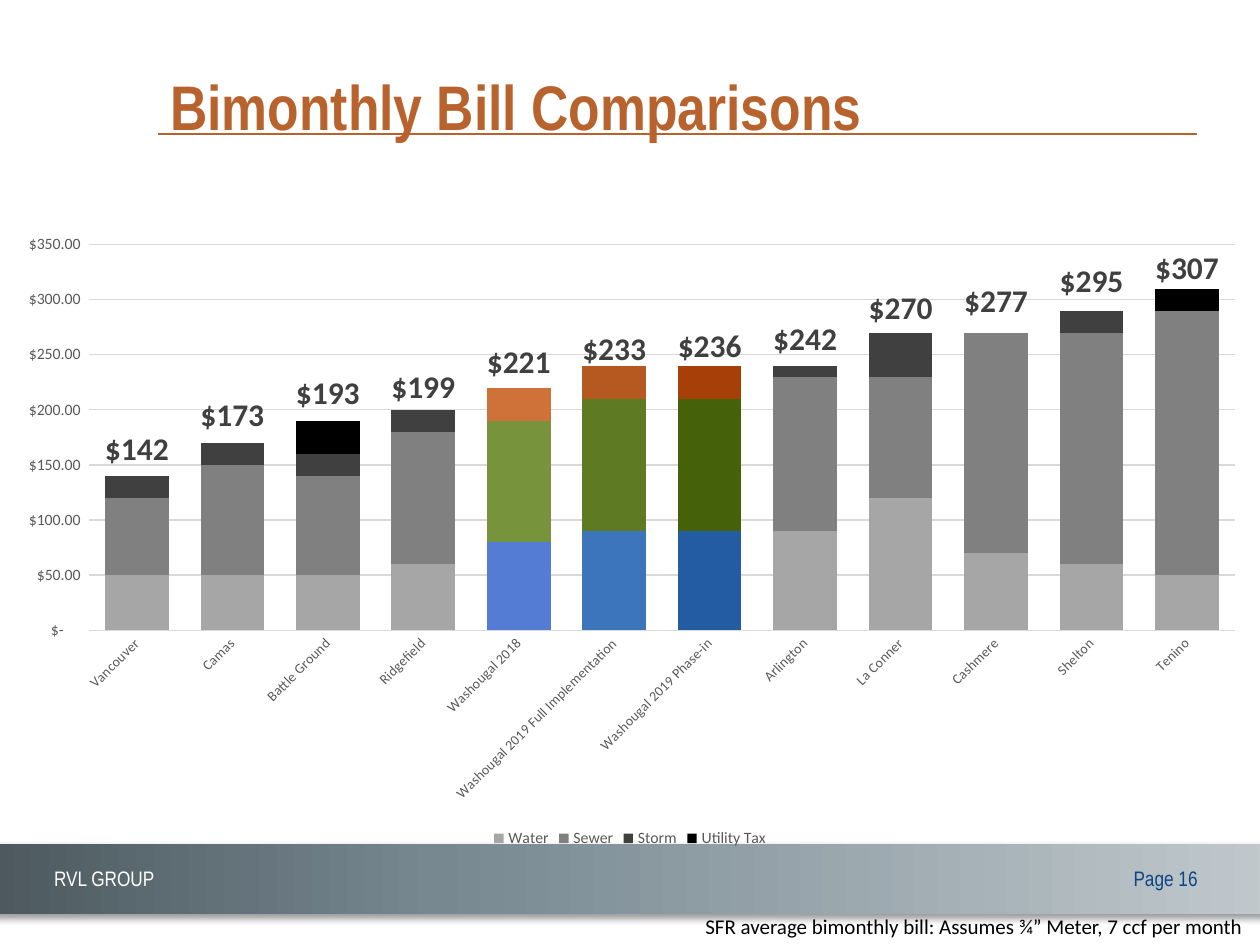
import pptx
import pptx.chart.data
import pptx.dml.color
import pptx.enum.chart
import pptx.enum.shapes
import pptx.enum.text
import pptx.oxml
import pptx.oxml.ns
import pptx.util
from dataclasses import dataclass
from lxml import etree

Cm = pptx.util.Cm
Pt = pptx.util.Pt
qn = pptx.oxml.ns.qn
ALIGN = pptx.enum.text.PP_ALIGN
ANCHOR = pptx.enum.text.MSO_ANCHOR


@dataclass(frozen=True)
class Theme:
    heading_font: str = "Arial Narrow"
    body_font: str = "Calibri"
    accent: str = "B8632E"
    page: str = "0B4585"
    white: str = "FFFFFF"
    black: str = "000000"
    axis: str = "595959"
    grid: str = "D9D9D9"
    label: str = "404040"
    band: tuple = ((0, "C1C9CD"), (65, "778891"), (100, "4B575D"))
    title_size: int = 36
    label_size: int = 18
    text_size: int = 12
    chart_size: int = 10
    axis_size: int = 9
    category_size: int = 8


THEME = Theme()

CITIES = ["Vancouver", "Camas", "Battle Ground", "Ridgefield", "Washougal 2018",
          "Washougal 2019 Full Implementation", "Washougal 2019 Phase-in",
          "Arlington", "La Conner", "Cashmere", "Shelton", "Tenino"]
FIRST_HIGHLIGHT = CITIES.index("Washougal 2018")
SERVICES = [
    ("Water", [50, 50, 50, 60, 80, 90, 90, 90, 120, 70, 60, 50],
     "A6A6A6", ["557CD5", "3C75BC", "235CA3"]),
    ("Sewer", [70, 100, 90, 120, 110, 120, 120, 140, 110, 200, 210, 240],
     "808080", ["77933C", "5E7A23", "45610A"]),
    ("Storm", [20, 20, 20, 20, 30, 30, 30, 10, 40, 0, 20, 0],
     "404040", ["CE723A", "B55921", "A64008"]),
    ("Utility Tax", [0, 0, 30, 0, 0, 0, 0, 0, 0, 0, 0, 20], "000000", []),
]
TOTALS = [142, 173, 193, 199, 221, 233, 236, 242, 270, 277, 295, 307]
ACCOUNTING = '_("$"* #,##0.00_);_("$"* \\(#,##0.00\\);_("$"* "-"??_);_(@_)'


def rgb(color):
    return pptx.dml.color.RGBColor.from_string(color)


def format_font(font, size, color, name, bold=False):
    font.size = Pt(size)
    font.color.rgb = rgb(color)
    font.name = name
    font.bold = bold


def write_text(shape, text, size=THEME.text_size, color=THEME.black,
               font=THEME.body_font, bold=False, align=ALIGN.LEFT, anchor=ANCHOR.TOP):
    frame = shape.text_frame
    frame.word_wrap = True
    frame.vertical_anchor = anchor
    paragraph = frame.paragraphs[0]
    paragraph.alignment = align
    run = paragraph.add_run()
    run.text = text
    format_font(run.font, size, color, font, bold)


def add_text(slide, box, text, **style):
    write_text(slide.shapes.add_textbox(*map(Cm, box)), text, **style)


def add_title(slide, box, text):
    title = slide.shapes.title
    title.left, title.top, title.width, title.height = map(Cm, box)
    write_text(title, text, size=THEME.title_size, color=THEME.accent,
               font=THEME.heading_font, bold=True, anchor=ANCHOR.MIDDLE)


def add_band(slide, box):
    band = slide.shapes.add_shape(pptx.enum.shapes.MSO_SHAPE.RECTANGLE, *map(Cm, box))
    band.line.fill.background()
    band.shadow.inherit = False
    band.fill.background()
    namespace = pptx.oxml.ns.nsdecls("a")
    stops = "".join(f'<a:gs pos="{position * 1000}"><a:srgbClr val="{color}"/></a:gs>'
                    for position, color in THEME.band)
    gradient = pptx.oxml.parse_xml(
        f'<a:gradFill {namespace} rotWithShape="1"><a:gsLst>{stops}</a:gsLst>'
        '<a:lin ang="10800000" scaled="0"/></a:gradFill>')
    properties = band.element.spPr
    properties.replace(properties.find(qn("a:noFill")), gradient)
    properties.find(qn("a:effectLst")).append(pptx.oxml.parse_xml(
        f'<a:outerShdw {namespace} blurRad="{Pt(4)}" dist="{Pt(3)}" dir="2700000" '
        f'rotWithShape="0"><a:srgbClr val="{THEME.black}"><a:alpha val="40000"/>'
        '</a:srgbClr></a:outerShdw>'))


def add_rule(slide, left, right, top):
    rule = slide.shapes.add_connector(pptx.enum.shapes.MSO_CONNECTOR.STRAIGHT,
                                      Cm(left), Cm(top), Cm(right), Cm(top))
    rule.line.color.rgb = rgb(THEME.accent)
    rule.line.width = Pt(1.5)
    etree.SubElement(rule.element.spPr, qn("a:effectLst"))


def move_last_series_to_line(chart):
    bars = chart.element.find(f".//{qn('c:barChart')}")
    series = bars.findall(qn("c:ser"))[-1]
    for inverted in series.findall(qn("c:invertIfNegative")):
        series.remove(inverted)
    lines = pptx.oxml.parse_xml(
        f'<c:lineChart {pptx.oxml.ns.nsdecls("c")}><c:grouping val="standard"/>'
        '<c:varyColors val="0"/><c:marker val="1"/></c:lineChart>')
    lines.insert(2, series)
    for axis in bars.findall(qn("c:axId")):
        etree.SubElement(lines, qn("c:axId")).set("val", axis.get("val"))
    bars.addnext(lines)


def format_axes(chart):
    category, value = chart.category_axis, chart.value_axis
    for axis, size in ((category, THEME.category_size), (value, THEME.axis_size)):
        axis.major_tick_mark = pptx.enum.chart.XL_TICK_MARK.NONE
        axis.minor_tick_mark = pptx.enum.chart.XL_TICK_MARK.NONE
        format_font(axis.tick_labels.font, size, THEME.axis, THEME.body_font)
    for line in (category.format.line, value.major_gridlines.format.line):
        line.color.rgb = rgb(THEME.grid)
        line.width = Pt(0.75)
    body = chart.element.find(f".//{qn('c:catAx')}/{qn('c:txPr')}/{qn('a:bodyPr')}")
    body.set("rot", "-2700000")
    body.set("vert", "horz")
    value.minimum_scale, value.maximum_scale, value.major_unit = 0, 350, 50
    value.format.line.fill.background()
    value.tick_labels.number_format = ACCOUNTING
    value.tick_labels.number_format_is_linked = False


def format_legend(chart, hidden):
    chart.has_legend = True
    legend = chart.legend
    legend.position = pptx.enum.chart.XL_LEGEND_POSITION.BOTTOM
    legend.include_in_layout = False
    format_font(legend.font, THEME.axis_size, THEME.axis, THEME.body_font)
    chart.element.find(f".//{qn('c:legendPos')}").addnext(pptx.oxml.parse_xml(
        f'<c:legendEntry {pptx.oxml.ns.nsdecls("c")}><c:idx val="{hidden}"/>'
        '<c:delete val="1"/></c:legendEntry>'))


def format_totals(series):
    series.smooth = False
    series.format.line.fill.background()
    series.marker.style = pptx.enum.chart.XL_MARKER_STYLE.NONE
    labels = series.data_labels
    labels.show_value = True
    labels.position = pptx.enum.chart.XL_LABEL_POSITION.ABOVE
    labels.number_format = '"$"#,##0'
    labels.number_format_is_linked = False
    format_font(labels.font, THEME.label_size, THEME.label, THEME.body_font, bold=True)


def add_bill_chart(slide, box):
    data = pptx.chart.data.CategoryChartData()
    data.categories = CITIES
    for name, values, *_ in SERVICES:
        data.add_series(name, values)
    data.add_series("Series 5", TOTALS)
    chart = slide.shapes.add_chart(pptx.enum.chart.XL_CHART_TYPE.COLUMN_STACKED,
                                   *map(Cm, box), data).chart
    chart.has_title = False
    format_font(chart.font, THEME.chart_size, THEME.black, THEME.body_font)
    move_last_series_to_line(chart)
    bars, lines = chart.plots
    bars.gap_width, bars.overlap, bars.vary_by_categories = 50, 100, False
    for series, (*_, color, highlights) in zip(bars.series, SERVICES):
        series.format.fill.solid()
        series.format.fill.fore_color.rgb = rgb(color)
        for index, highlight in enumerate(highlights, FIRST_HIGHLIGHT):
            fill = series.points[index].format.fill
            fill.solid()
            fill.fore_color.rgb = rgb(highlight)
    format_totals(lines.series[0])
    format_axes(chart)
    format_legend(chart, hidden=len(SERVICES))


def main():
    presentation = pptx.Presentation()
    presentation.slide_width, presentation.slide_height = Cm(25.4), Cm(19.05)
    slide = presentation.slides.add_slide(presentation.slide_layouts[5])
    add_band(slide, (-0.43, 17.02, 26.24, 1.4))
    add_text(slide, (22.43, 17.32, 2.06, 0.76), "Page 16 ", color=THEME.page,
             font=THEME.heading_font, align=ALIGN.RIGHT)
    add_rule(slide, 3.18, 24.13, 2.7)
    add_text(slide, (0.84, 17.32, 3.61, 0.76), "RVL GROUP", color=THEME.white,
             font=THEME.heading_font)
    add_title(slide, (3.18, 0.85, 20.96, 2.54), "Bimonthly Bill Comparisons")
    add_text(slide, (13.97, 18.29, 11.43, 0.76),
             "SFR average bimonthly bill: Assumes ¾” Meter, 7 ccf per month")
    add_bill_chart(slide, (0, 4.49, 25.4, 12.7))
    presentation.save("out.pptx")


if __name__ == "__main__":
    main()
